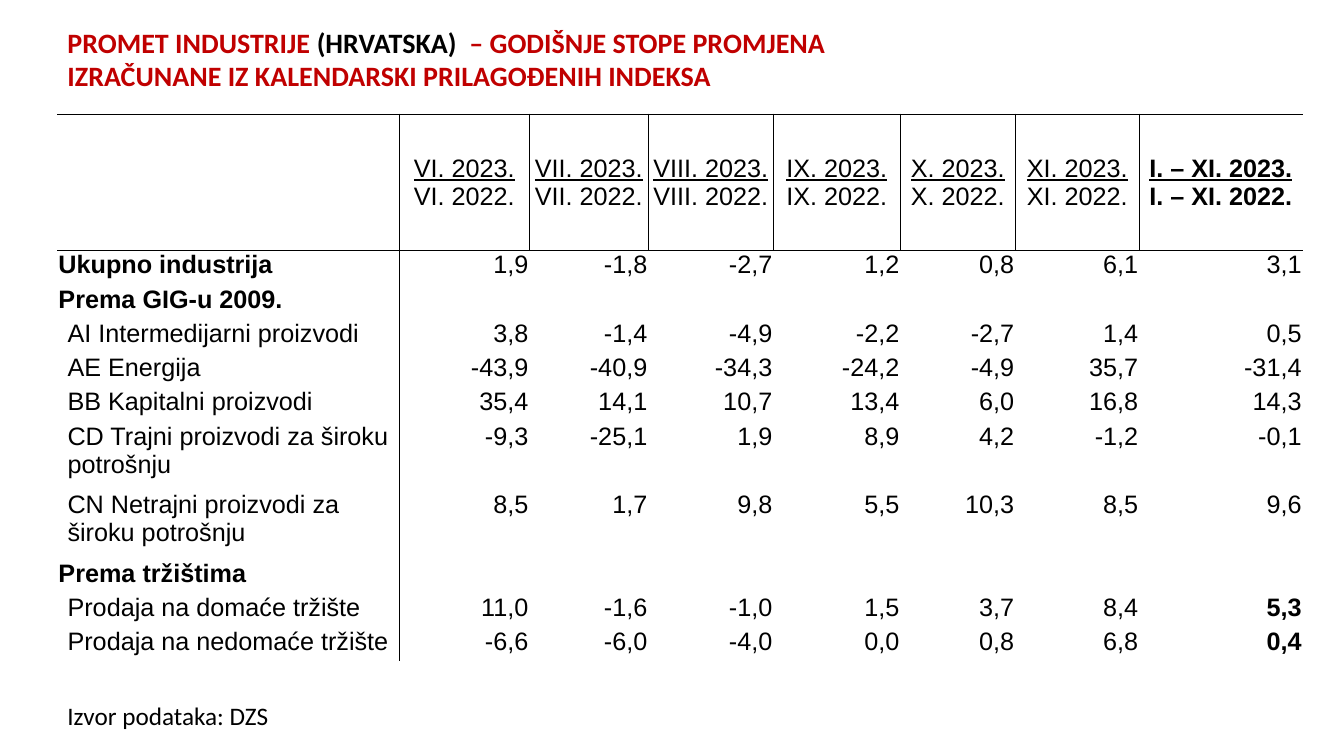
from dataclasses import dataclass

from lxml import etree
from pptx import Presentation
from pptx import util as u
from pptx.dml.color import RGBColor
from pptx.enum import text
from pptx.oxml import ns

BLACK = "000000"
RED = "C00000"
LEFT = 0.57
COLUMN_WIDTHS = [3.39, 1.29, 1.18, 1.24, 1.26, 1.14, 1.23, 1.62]
HEADER_HEIGHT = 1.35
LINE_HEIGHT = 0.34
PERIODS = ["VI.", "VII.", "VIII.", "IX.", "X.", "XI.", "I. – XI."]


@dataclass
class Run:
    wording: str
    size: int = 18
    name: str = "Arial"
    color: str = BLACK
    bold: bool = False
    underline: bool = False


@dataclass
class Row:
    label: str
    values: str = ""
    heading: bool = False
    bold_total: bool = False
    lines: int = 1


ROWS = [
    Row("Ukupno industrija", "1,9 -1,8 -2,7 1,2 0,8 6,1 3,1", heading=True),
    Row("Prema GIG-u 2009.", heading=True),
    Row("AI Intermedijarni proizvodi", "3,8 -1,4 -4,9 -2,2 -2,7 1,4 0,5"),
    Row("AE Energija", "-43,9 -40,9 -34,3 -24,2 -4,9 35,7 -31,4"),
    Row("BB Kapitalni proizvodi", "35,4 14,1 10,7 13,4 6,0 16,8 14,3"),
    Row("CD Trajni proizvodi za široku potrošnju",
        "-9,3 -25,1 1,9 8,9 4,2 -1,2 -0,1", lines=2),
    Row("CN Netrajni proizvodi za široku potrošnju",
        "8,5 1,7 9,8 5,5 10,3 8,5 9,6", lines=2),
    Row("Prema tržištima", heading=True),
    Row("Prodaja na domaće tržište", "11,0 -1,6 -1,0 1,5 3,7 8,4 5,3", bold_total=True),
    Row("Prodaja na nedomaće tržište", "-6,6 -6,0 -4,0 0,0 0,8 6,8 0,4", bold_total=True),
]


def rgb(value: str) -> RGBColor:
    return RGBColor.from_string(value)


def set_all(target, values: dict) -> None:
    for key, value in values.items():
        setattr(target, key, value)


def add_run(para, run: Run) -> None:
    span = para.add_run()
    span.text = run.wording
    set_all(span.font, {"size": u.Pt(run.size), "name": run.name,
                        "bold": run.bold, "underline": run.underline})
    span.font.color.rgb = rgb(run.color)


def add_text(page, top: float, width: float, height: float, runs: list[Run]) -> None:
    box = page.shapes.add_textbox(*map(u.Inches, (LEFT, top, width, height)))
    box.text_frame.word_wrap = True
    for run in runs:
        add_run(box.text_frame.paragraphs[0], run)


def set_borders(cell, sides: str) -> None:
    properties = cell._tc.get_or_add_tcPr()
    for side in "LRTB":
        line = etree.SubElement(properties, ns.qn(f"a:ln{side}"), w=str(u.Pt(0.5)))
        if side in sides:
            fill = etree.SubElement(line, ns.qn("a:solidFill"))
            etree.SubElement(fill, ns.qn("a:srgbClr"), val=BLACK)
        else:
            etree.SubElement(line, ns.qn("a:noFill"))


def fill_cell(cell, lines: list[Run], align, borders: str,
              indent: float = 0.01, anchor=text.MSO_ANCHOR.TOP) -> None:
    set_all(cell, {"margin_left": u.Inches(indent), "margin_right": u.Inches(0.01),
                   "margin_top": u.Inches(0.01), "margin_bottom": 0,
                   "vertical_anchor": anchor})
    set_borders(cell, borders)
    cell.fill.background()
    para = cell.text_frame.paragraphs[0]
    para.alignment = align
    for index, run in enumerate(lines):
        if index:
            para.add_line_break()
        add_run(para, run)


def add_turnover_table(page) -> None:
    heights = [HEADER_HEIGHT] + [row.lines * LINE_HEIGHT for row in ROWS]
    frame = page.shapes.add_table(
        len(heights), len(COLUMN_WIDTHS), u.Inches(LEFT), u.Inches(1.13),
        u.Inches(sum(COLUMN_WIDTHS)), u.Inches(sum(heights)))
    table = frame.table
    set_all(table, {"first_row": False, "horz_banding": False})
    for column, width in zip(table.columns, COLUMN_WIDTHS):
        column.width = u.Inches(width)
    for line, height in zip(table.rows, heights):
        line.height = u.Inches(height)

    fill_cell(table.cell(0, 0), [Run("")], text.PP_ALIGN.LEFT, "TRB")
    for column, period in enumerate(PERIODS, 1):
        last = column == len(PERIODS)
        ratio = [Run(f"{period} 2023.", bold=last, underline=True),
                 Run(f"{period} 2022.", bold=last)]
        fill_cell(table.cell(0, column), ratio, text.PP_ALIGN.CENTER,
                  "LTB" if last else "LRTB", anchor=text.MSO_ANCHOR.MIDDLE)

    for index, row in enumerate(ROWS, 1):
        top = "T" if index == 1 else ""
        fill_cell(table.cell(index, 0), [Run(row.label, bold=row.heading)],
                  text.PP_ALIGN.LEFT, "R" + top, indent=0.01 if row.heading else 0.1)
        values = row.values.split() or [""] * len(PERIODS)
        for column, value in enumerate(values, 1):
            bold = row.bold_total and column == len(PERIODS)
            fill_cell(table.cell(index, column), [Run(value, bold=bold)],
                      text.PP_ALIGN.RIGHT, ("L" if column == 1 else "") + top)


def main() -> None:
    deck = Presentation()
    set_all(deck, {"slide_width": u.Inches(13.33), "slide_height": u.Inches(7.5)})
    page = deck.slides.add_slide(deck.slide_layouts[6])
    title = [
        ("PROMET INDUSTRIJE ", RED),
        ("(HRVATSKA)  ", BLACK),
        ("– GODIŠNJE STOPE PROMJENA IZRAČUNANE IZ KALENDARSKI PRILAGOĐENIH INDEKSA", RED),
    ]
    add_text(page, 0.2, 9.08, 0.77,
             [Run(wording, 20, "Calibri", color, bold=True) for wording, color in title])
    add_text(page, 6.9, 6.67, 0.4, [Run("Izvor podataka: DZS", name="Calibri")])
    add_turnover_table(page)
    deck.save("out.pptx")


if __name__ == "__main__":
    main()
